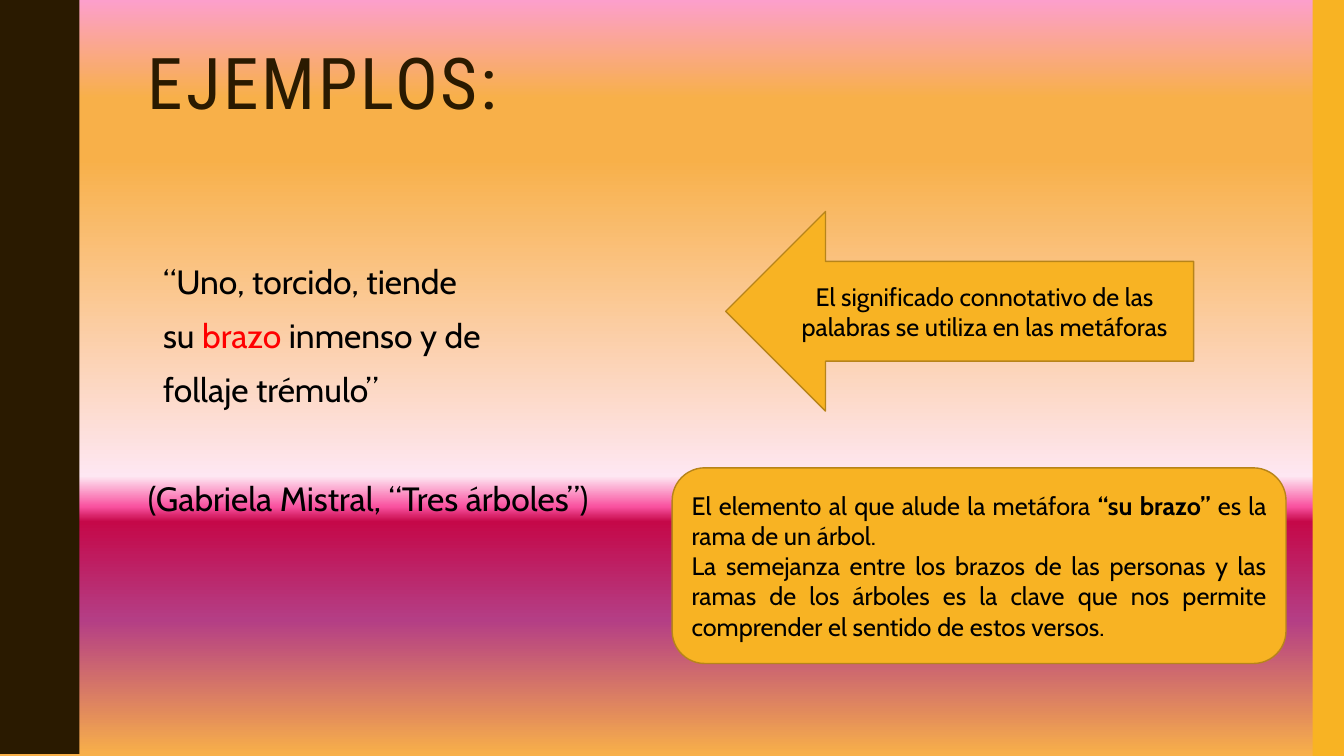
from lxml import etree
from pptx import Presentation
from pptx.dml.color import RGBColor
from pptx.enum.shapes import MSO_SHAPE
from pptx.enum.text import MSO_ANCHOR, PP_ALIGN
from pptx.oxml.ns import qn
from pptx.util import Cm, Pt

RECT = MSO_SHAPE.RECTANGLE
ARROW = MSO_SHAPE.LEFT_ARROW
ROUNDED = MSO_SHAPE.FLOWCHART_ALTERNATE_PROCESS
TOP, MIDDLE = MSO_ANCHOR.TOP, MSO_ANCHOR.MIDDLE
LEFT, CENTER, JUSTIFY = PP_ALIGN.LEFT, PP_ALIGN.CENTER, PP_ALIGN.JUSTIFY

WIDTH, HEIGHT = 33.87, 19.05
BROWN, GOLD, EDGE = "2A1A00", "F8B323", "B7841A"
BLACK, RED = "000000", "FF0000"
STOPS = [(0, "FC9FCB"), (13, "F8B049"), (21, "F8B049"), (63, "FEE7F2"),
         (67, "F952A0"), (69, "C50849"), (82, "B43E85"), (100, "F8B049")]
# Half a wave, trough to crest: (x, y) in cm
WAVE = [(1.98, 0), (1.98, 0.18), (2.01, 0.36), (2.03, 0.51), (2.06, 0.64),
        (2.11, 0.74), (2.16, 0.84), (2.21, 0.97), (2.26, 1.07), (2.31, 1.17),
        (2.36, 1.27), (2.41, 1.4), (2.44, 1.55), (2.46, 1.73), (2.46, 1.9)]
PERIOD, WAVES = 3.81, 5


def color(text):
    return RGBColor.from_string(text)


def paint(shape, fill, line=None):
    shape.shadow.inherit = False
    shape.fill.solid()
    shape.fill.fore_color.rgb = color(fill)
    if line:
        shape.line.color.rgb = color(line)
        shape.line.width = Pt(1)
    else:
        shape.line.fill.background()


def backdrop(slide):
    """Fill the background with a top-to-bottom gradient."""
    fill = slide.background.fill
    fill.gradient()
    fill.gradient_angle = 270
    stops = slide.element.find(".//" + qn("a:gsLst"))
    for old in list(stops):
        stops.remove(old)
    for place, shade in STOPS:
        stop = etree.SubElement(stops, qn("a:gs"), pos=str(place * 1000))
        etree.SubElement(stop, qn("a:srgbClr"), val=shade)


def border(slide):
    """Draw the wavy left edge and the right strip."""
    crest = WAVE + [(x, PERIOD - y) for x, y in WAVE[-2::-1]]
    edge = [(x, y + n * PERIOD) for n in range(WAVES) for x, y in crest]
    build = slide.shapes.build_freeform(0, 0, scale=Cm(1))
    build.add_line_segments(edge + [(0, HEIGHT)], close=True)
    paint(build.convert_to_shape(), BROWN)
    wide = 0.79
    strip = slide.shapes.add_shape(
        RECT, Cm(WIDTH - wide), 0, Cm(wide), Cm(HEIGHT))
    paint(strip, GOLD)


def write(frame, lines, size, face="Cabin", align=LEFT, anchor=TOP, shade=BLACK):
    """Fill a frame; each line is a list of (text, changes) runs."""
    frame.word_wrap = True
    frame.vertical_anchor = anchor
    for n, runs in enumerate(lines):
        para = frame.add_paragraph() if n else frame.paragraphs[0]
        para.alignment = align
        para.font.size = Pt(size)
        para.font.name = face
        para.font.color.rgb = color(shade)
        for text, change in runs:
            run = para.add_run()
            run.text = text
            if "bold" in change:
                run.font.bold = True
            if "color" in change:
                run.font.color.rgb = color(change["color"])
    return frame.paragraphs


def title(slide, box):
    frame = slide.shapes.add_textbox(*map(Cm, box)).text_frame
    head = write(frame, [[("EJEMPLOS:", {})]], 51, "Roboto Condensed",
                 shade=BROWN)[0]
    head.line_spacing = 0.9
    for run in head.runs:
        run.font._element.set("spc", "200")


def poem(slide, box):
    verses = [[("“Uno, torcido, tiende", {})],
              [("su ", {}), ("brazo", {"color": RED}), (" inmenso y de", {})],
              [("follaje trémulo”", {})]]
    author = [("(Gabriela Mistral, “Tres árboles”)", {})]
    frame = slide.shapes.add_textbox(*map(Cm, box)).text_frame
    paras = write(frame, verses + [author], 24)
    for para in paras:
        para.line_spacing = 1.1
        para.space_before = Pt(7)
    for para in paras[:-1]:
        para._p.get_or_add_pPr().set("marL", str(Cm(0.38)))
    paras[-1].space_before = Pt(46)


def note(slide, kind, box, lines, align):
    shape = slide.shapes.add_shape(kind, *map(Cm, box))
    paint(shape, GOLD, EDGE)
    write(shape.text_frame, lines, 18, align=align, anchor=MIDDLE)


def main():
    deck = Presentation()
    deck.slide_width, deck.slide_height = Cm(WIDTH), Cm(HEIGHT)
    slide = deck.slides.add_slide(deck.slide_layouts[6])
    backdrop(slide)
    border(slide)
    title(slide, (3.48, 1.07, 28.27, 4.14))
    poem(slide, (3.48, 6.35, 28.27, 9.98))
    note(slide, ARROW, (18.29, 5.33, 11.79, 5.03),
         [[("El significado connotativo de las palabras se utiliza "
            "en las metáforas", {})]], CENTER)
    note(slide, ROUNDED, (16.94, 11.79, 15.47, 4.93),
         [[("El elemento al que alude la metáfora ", {}),
           ("“su brazo” ", {"bold": True}),
           ("es la rama de un árbol.", {})],
          [("La semejanza entre los brazos de las personas y las ramas de "
            "los árboles es la clave que nos permite comprender el sentido "
            "de estos versos.", {})]], JUSTIFY)
    deck.save("out.pptx")


if __name__ == "__main__":
    main()
